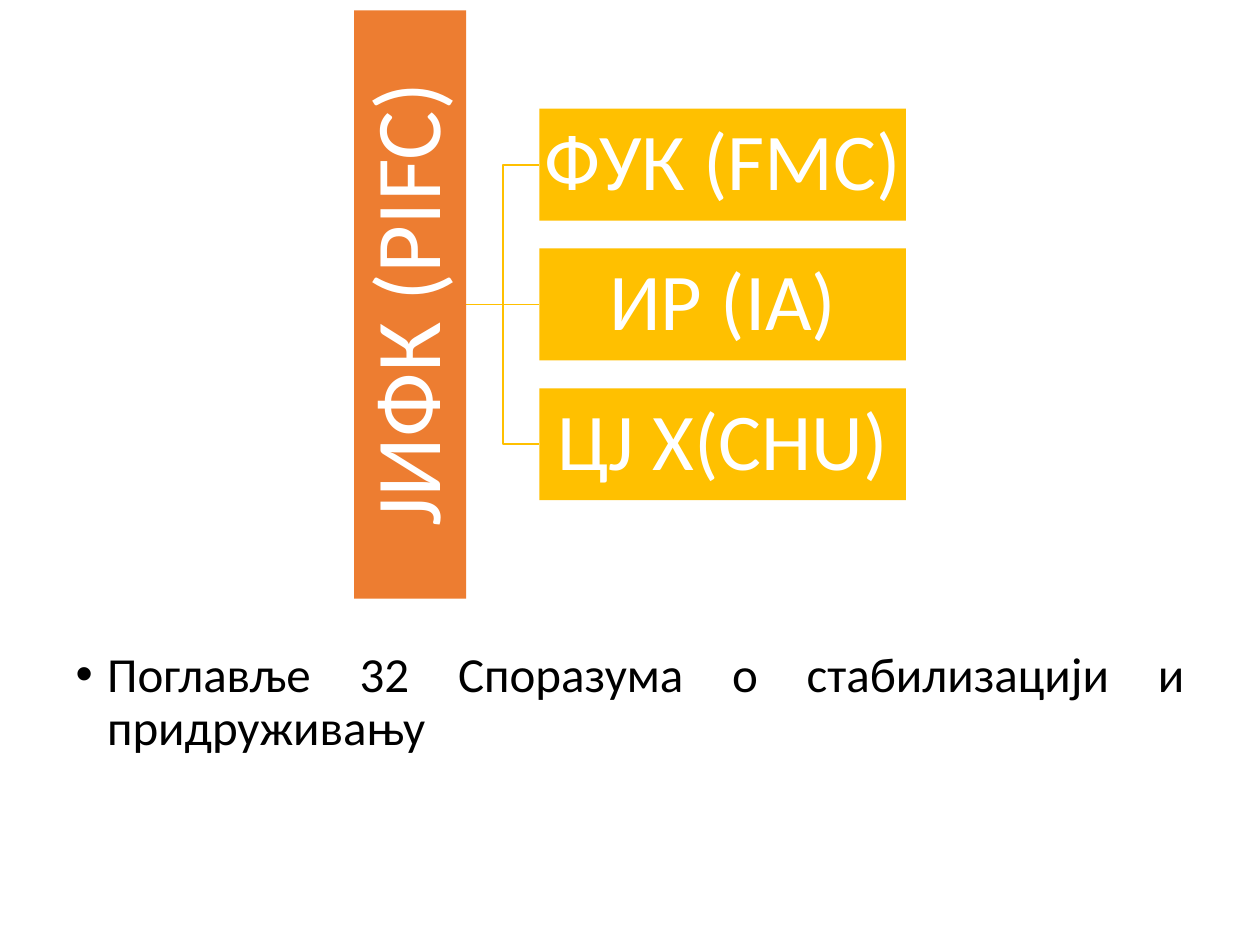
from lxml.etree import SubElement
from pptx import Presentation
from pptx.dml.color import RGBColor
from pptx.enum.shapes import MSO_CONNECTOR, MSO_SHAPE
from pptx.enum.text import MSO_ANCHOR, MSO_AUTO_SIZE, PP_ALIGN
from pptx.oxml.ns import qn
from pptx.util import Pt

WHITE, BLACK, ORANGE, GOLD = "FFFFFF", "000000", "ED7D31", "FFC000"


def rgb(value):
    return RGBColor.from_string(value)


class Deck:
    """Holds the style and the current slide; all lengths are points."""

    font = "Calibri"
    spacing = 0.9

    def __init__(self, width, height):
        self.prs = Presentation()
        self.prs.slide_width, self.prs.slide_height = Pt(width), Pt(height)
        self.s = self.prs.slides.add_slide(self.prs.slide_layouts[1])

    def style(self, p, size, color, align):
        p.alignment, p.line_spacing = align, self.spacing
        for r in p.runs:
            r.font.name, r.font.size = self.font, Pt(size)
            r.font.color.rgb = rgb(color)

    def drop_title(self):
        title = self.s.shapes.title.element
        title.getparent().remove(title)

    def bullets(self, text, left, top, width, height, size, indent=18):
        sp = self.s.placeholders[1]
        sp.left, sp.top, sp.width, sp.height = map(Pt, (left, top, width, height))
        tf = sp.text_frame
        tf.text = text
        tf.auto_size = MSO_AUTO_SIZE.NONE
        p = tf.paragraphs[0]
        pPr = p._p.get_or_add_pPr()
        pPr.set("marL", str(Pt(indent)))
        pPr.set("indent", str(Pt(-indent)))
        SubElement(pPr, qn("a:buFont")).set("typeface", "Arial")
        SubElement(pPr, qn("a:buChar")).set("char", "•")
        p.space_before = Pt(0)
        self.style(p, size, BLACK, PP_ALIGN.JUSTIFY)

    def box(self, text, left, top, width, height, fill, size, rotation=0):
        sp = self.s.shapes.add_shape(
            MSO_SHAPE.RECTANGLE, *map(Pt, (left, top, width, height)))
        sp.rotation = rotation
        sp.shadow.inherit = False
        sp.fill.solid()
        sp.fill.fore_color.rgb = rgb(fill)
        sp.line.fill.background()
        tf = sp.text_frame
        tf.text = text
        tf.word_wrap = False
        tf.vertical_anchor = MSO_ANCHOR.MIDDLE
        tf.margin_left = tf.margin_right = tf.margin_top = tf.margin_bottom = Pt(2.2)
        self.style(tf.paragraphs[0], size, WHITE, PP_ALIGN.CENTER)

    def line(self, x1, y1, x2, y2, color):
        sp = self.s.shapes.add_connector(
            MSO_CONNECTOR.STRAIGHT, *map(Pt, (x1, y1, x2, y2)))
        SubElement(sp._element.spPr, qn("a:effectLst"))
        sp.line.color.rgb, sp.line.width = rgb(color), Pt(1)

    def elbow(self, x1, y1, x2, y2, color):
        mid = (x1 + x2) / 2
        builder = self.s.shapes.build_freeform(Pt(x1), Pt(y1))
        builder.add_line_segments(
            [(Pt(x), Pt(y)) for x, y in ((mid, y1), (mid, y2), (x2, y2))], close=False)
        sp = builder.convert_to_shape()
        sp.shadow.inherit = False
        sp.fill.background()
        sp.line.color.rgb, sp.line.width = rgb(color), Pt(1)


def main():
    deck = Deck(720, 540)
    deck.drop_title()
    deck.bullets("Поглавље 32 Споразума о стабилизацији и придруживању",
                 36, 368, 648, 114, 28)

    thickness, step, center = 64, 79.9, 174
    root_length, root_right = 336.2, 266.4
    branch_left, branch_width = 308.2, 209.5
    branches = ["ФУК (FMC)", "ИР (IA)", "ЦЈ Х(CHU)"]
    centers = [center + (i - 1) * step for i in range(len(branches))]

    for y in centers:
        link = deck.line if y == center else deck.elbow
        link(root_right, center, branch_left, y, GOLD)
    deck.box("ЈИФК (PIFC)", root_right - (thickness + root_length) / 2,
             center - thickness / 2, root_length, thickness, ORANGE, 53, rotation=270)
    for text, y in zip(branches, centers):
        deck.box(text, branch_left, y - thickness / 2, branch_width, thickness, GOLD, 46)

    deck.prs.save("out.pptx")


if __name__ == "__main__":
    main()
